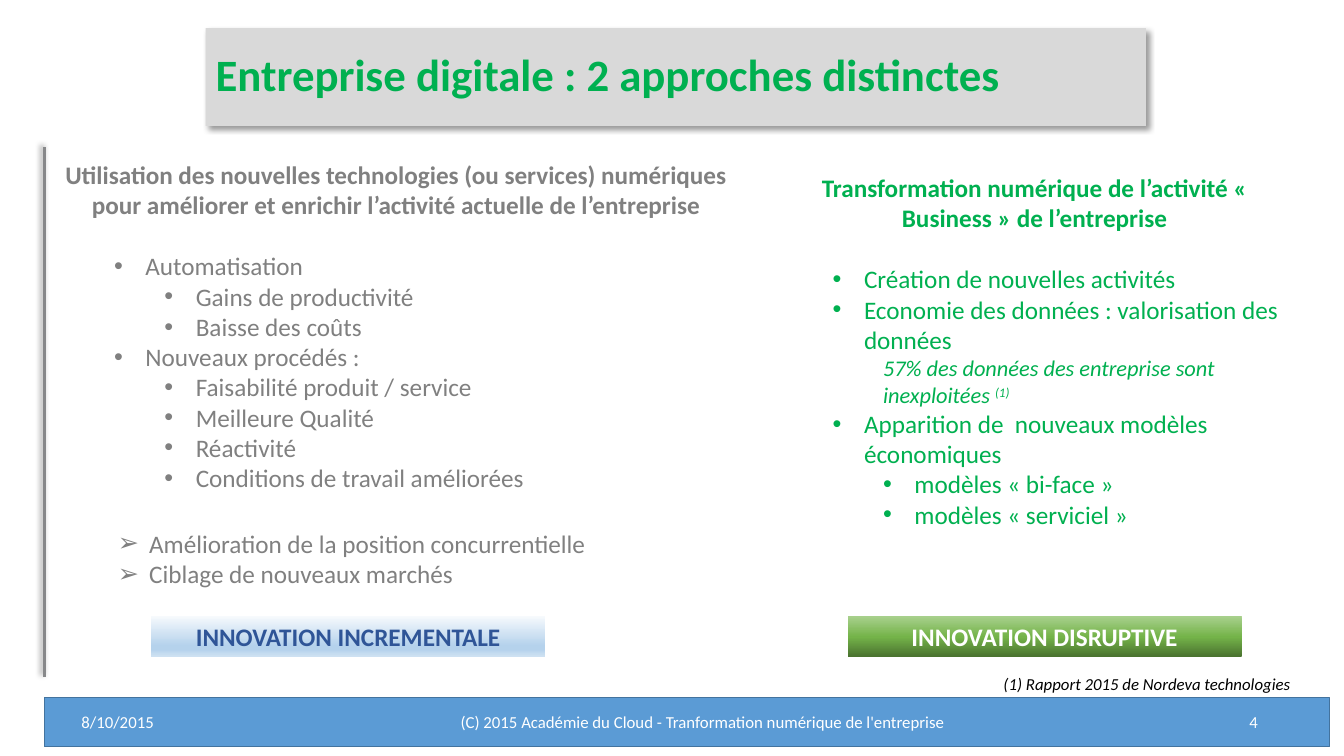
from dataclasses import dataclass

from lxml import etree
from pptx import Presentation
from pptx.dml.color import RGBColor
from pptx.enum.shapes import MSO_CONNECTOR, MSO_SHAPE
from pptx.enum.text import MSO_ANCHOR, MSO_AUTO_SIZE, PP_ALIGN
from pptx.oxml.ns import qn
from pptx.util import Cm, Pt

LEFT, CENTER, RIGHT = PP_ALIGN.LEFT, PP_ALIGN.CENTER, PP_ALIGN.RIGHT
MIDDLE, TOP = MSO_ANCHOR.MIDDLE, MSO_ANCHOR.TOP
NO_AUTOFIT = MSO_AUTO_SIZE.NONE
RECTANGLE = MSO_SHAPE.RECTANGLE
STRAIGHT = MSO_CONNECTOR.STRAIGHT


@dataclass(frozen=True)
class Theme:
    font: str = "Calibri"
    green: str = "00B050"
    grey: str = "808080"
    white: str = "FFFFFF"
    black: str = "000000"
    navy: str = "2F5597"
    title_fill: str = "D9D9D9"
    band_fill: str = "5B9BD5"
    band_line: str = "43739E"
    rule: str = "87888A"
    blue_stops: tuple = ((0, "F7FAFD"), (74, "B5D2EC"), (83, "B5D2EC"), (100, "CEE1F2"))
    green_stops: tuple = ((0, "A9D18E"), (52, "74B349"), (100, "4B7430"))
    title_size: int = 32
    body_size: int = 18
    quote_size: int = 16
    small_size: int = 12


THEME = Theme()

# Paragraph kinds: level, left margin and hanging indent in cm, bullet
KINDS = {
    "heading": (0, 0, 0, None),
    "plain": (0, 0, 0, None),
    "item": (1, 2.06, 0.79, "•"),
    "subitem": (2, 3.33, 0.79, "•"),
    "quote": (2, 2.54, 0, None),
    "arrow": (0, 0.79, 0.79, "➢"),
}


def write_lines(text_frame, lines, color, size, align=LEFT, bold=False, italic=False):
    """Fill a text frame with (kind, text) lines; '^' starts a superscript."""
    text_frame.word_wrap = True
    text_frame.auto_size = NO_AUTOFIT
    for index, (kind, text) in enumerate(lines):
        paragraph = text_frame.paragraphs[0] if index == 0 else text_frame.add_paragraph()
        level, margin, hanging, bullet = KINDS[kind]
        heading, quote = kind == "heading", kind == "quote"
        main_text, _, superscript = text.partition("^")
        paragraph.text = main_text
        if superscript:
            run = paragraph.add_run()
            run.text = superscript
            run._r.get_or_add_rPr().set("baseline", "30000")
        paragraph.level = level
        paragraph.alignment = CENTER if heading else align
        paragraph.space_before = Pt(0)
        paragraph.space_after = Pt(22 if heading else 0)
        properties = paragraph._p.get_or_add_pPr()
        properties.set("marL", str(Cm(margin)))
        properties.set("indent", str(-Cm(hanging)))
        if bullet:
            etree.SubElement(properties, qn("a:buFont"), typeface="Arial")
            etree.SubElement(properties, qn("a:buChar"), char=bullet)
        else:
            etree.SubElement(properties, qn("a:buNone"))
        for run in paragraph.runs:
            run.font.name = THEME.font
            run.font.size = Pt(THEME.quote_size if quote else size)
            run.font.bold = bold or heading
            run.font.italic = italic or quote
            run.font.color.rgb = RGBColor.from_string(color)


def add_shadow(shape, direction):
    """Give a shape a soft shadow; direction is in degrees."""
    effects = etree.SubElement(shape._element.spPr, qn("a:effectLst"))
    shadow = etree.SubElement(
        effects, qn("a:outerShdw"), blurRad=str(Pt(4)), dist=str(Pt(3)),
        dir=str(direction * 60000), algn="ctr", rotWithShape="0")
    shadow_color = etree.SubElement(shadow, qn("a:srgbClr"), val=THEME.black)
    etree.SubElement(shadow_color, qn("a:alpha"), val="40000")


presentation = Presentation()
presentation.slide_width, presentation.slide_height = Cm(33.87), Cm(19.05)
slide = presentation.slides.add_slide(presentation.slide_layouts[3])
shapes = slide.shapes
title, left_body, right_body = slide.placeholders

# Footer band and vertical rule
band = shapes.add_shape(RECTANGLE, Cm(1.12), Cm(17.58), Cm(32.39), Cm(1.24))
band.shadow.inherit = False
band.fill.solid()
band.fill.fore_color.rgb = RGBColor.from_string(THEME.band_fill)
band.line.color.rgb = RGBColor.from_string(THEME.band_line)
band.line.width = Pt(1)

rule = shapes.add_connector(STRAIGHT, Cm(1.12), Cm(3.71), Cm(1.12), Cm(17.07))
rule.line.color.rgb = RGBColor.from_string(THEME.rule)
rule.line.width = Pt(2)
add_shadow(rule, 225)

# Title
title.left, title.top, title.width, title.height = Cm(5.18), Cm(0.71), Cm(23.7), Cm(2.46)
title.fill.solid()
title.fill.fore_color.rgb = RGBColor.from_string(THEME.title_fill)
title.line.fill.background()
add_shadow(title, 45)
write_lines(title.text_frame, [("plain", "Entreprise digitale : 2 approches distinctes")],
            THEME.green, THEME.title_size, bold=True)
title.text_frame.vertical_anchor = MIDDLE
title.text_frame.paragraphs[0].line_spacing = 0.9

# The two approaches
incremental = [
    ("heading", "Utilisation des nouvelles technologies (ou services) numériques\v"
                "pour améliorer et enrichir l’activité actuelle de l’entreprise"),
    ("item", "Automatisation"),
    ("subitem", "Gains de productivité"),
    ("subitem", "Baisse des coûts"),
    ("item", "Nouveaux procédés :"),
    ("subitem", "Faisabilité produit / service"),
    ("subitem", "Meilleure Qualité"),
    ("subitem", "Réactivité"),
    ("subitem", "Conditions de travail améliorées"),
]
disruptive = [
    ("heading", "Transformation numérique de l’activité « Business » de l’entreprise"),
    ("item", "Création de nouvelles activités"),
    ("item", "Economie des données : valorisation des données"),
    ("quote", "57% des données des entreprise sont inexploitées ^(1)"),
    ("item", "Apparition de  nouveaux modèles économiques"),
    ("subitem", "modèles « bi-face »"),
    ("subitem", "modèles « serviciel »"),
]
for body, box, lines, color in (
    (left_body, (1.35, 3.89, 17.27, 8.71), incremental, THEME.grey),
    (right_body, (19.46, 4.22, 13.23, 9.32), disruptive, THEME.green),
):
    body.left, body.top, body.width, body.height = map(Cm, box)
    write_lines(body.text_frame, lines, color, THEME.body_size)
    body.text_frame.vertical_anchor = TOP

# Benefits of the first approach
benefits = shapes.add_textbox(Cm(2.72), Cm(13.18), Cm(15.52), Cm(1.8))
write_lines(benefits.text_frame,
            [("arrow", "Amélioration de la position concurrentielle"),
             ("arrow", "Ciblage de nouveaux marchés")],
            THEME.grey, THEME.body_size)

# Innovation badges
for left, text, stops, color in (
    (3.81, "INNOVATION INCREMENTALE", THEME.blue_stops, THEME.navy),
    (21.36, "INNOVATION DISRUPTIVE", THEME.green_stops, THEME.white),
):
    badge = shapes.add_shape(RECTANGLE, Cm(left), Cm(15.52), Cm(9.93), Cm(1.02))
    badge.shadow.inherit = False
    badge.line.fill.background()
    badge.fill.gradient()
    badge.fill.gradient_angle = 270
    stop_list = badge._element.spPr.find(qn("a:gradFill")).find(qn("a:gsLst"))
    stop_list.clear()
    for position, stop_color in stops:
        stop = etree.SubElement(stop_list, qn("a:gs"), pos=str(position * 1000))
        etree.SubElement(stop, qn("a:srgbClr"), val=stop_color)
    write_lines(badge.text_frame, [("plain", text)], color, THEME.body_size, CENTER, bold=True)
    badge.text_frame.vertical_anchor = MIDDLE

# Source note
source_note = shapes.add_textbox(Cm(25.04), Cm(16.84), Cm(7.62), Cm(0.76))
write_lines(source_note.text_frame, [("plain", "(1) Rapport 2015 de Nordeva technologies")],
            THEME.black, THEME.small_size, italic=True)
source_note.text_frame.word_wrap = False

# Footer texts
for left, width, text, align in (
    (1.8, 2.92, "8/10/2015", LEFT),
    (5.44, 24.54, "(C) 2015 Académie du Cloud - Tranformation numérique de l'entreprise", CENTER),
    (30.63, 1.32, "4", RIGHT),
):
    footer = shapes.add_textbox(Cm(left), Cm(17.91), Cm(width), Cm(0.58))
    write_lines(footer.text_frame, [("plain", text)], THEME.white, THEME.small_size, align)
    footer.text_frame.vertical_anchor = MIDDLE

presentation.save("out.pptx")
